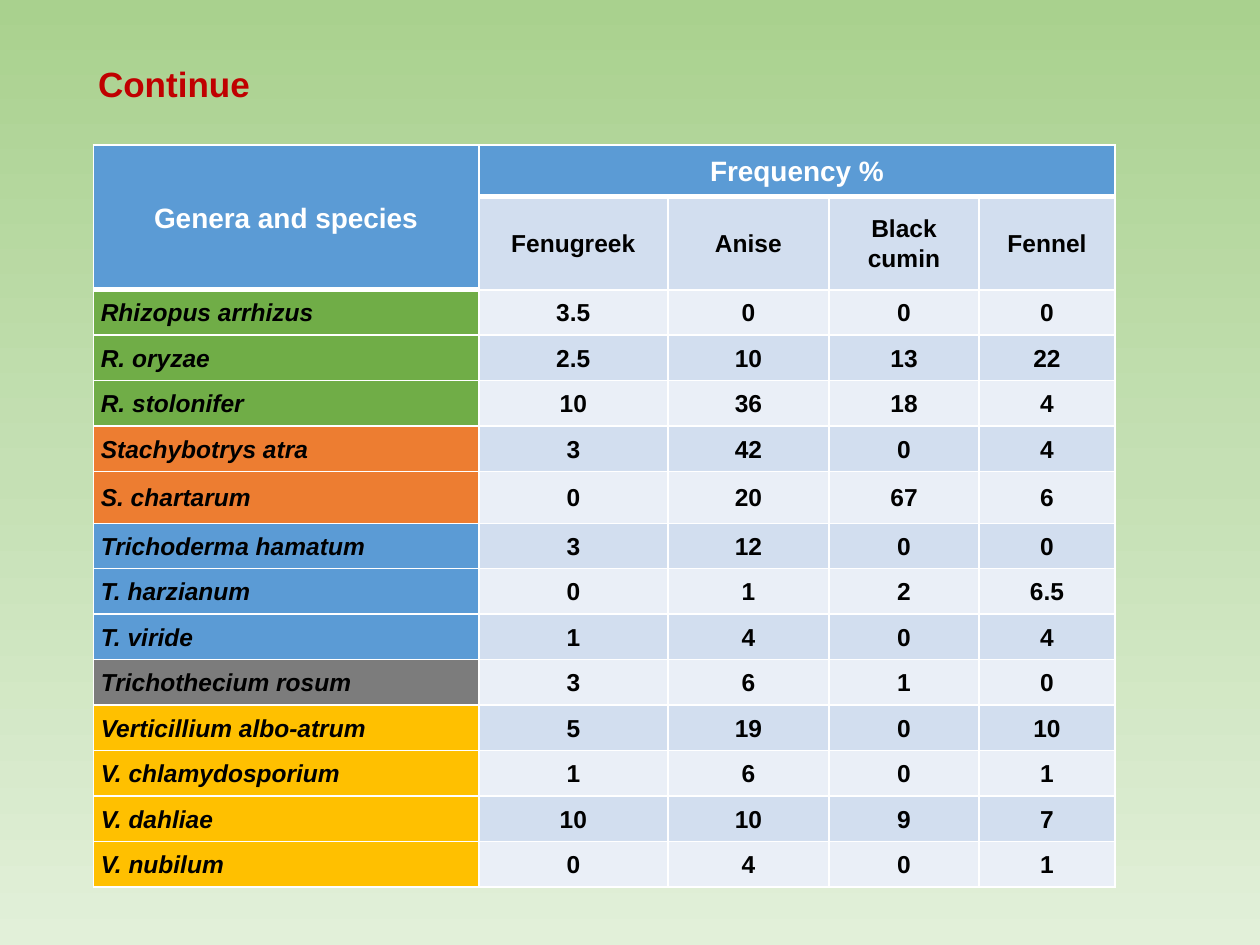
import copy

import pptx
import pptx.dml.color
import pptx.enum.text
import pptx.oxml
import pptx.oxml.ns
import pptx.util

WIDE, HIGH = pptx.util.Inches(10), pptx.util.Inches(7.5)
ALIGN = pptx.enum.text.PP_ALIGN
MIDDLE = pptx.enum.text.MSO_ANCHOR.MIDDLE

HUES = {
    "top": "A9D18E", "mid": "C5E0B4", "low": "E2F0D9",
    "title": "C00000", "white": "FFFFFF", "black": "000000",
    "blue": "5B9BD5", "dark": "D2DEEF", "light": "EAEFF7",
    "green": "70AD47", "orange": "ED7D31", "grey": "7C7C7C", "gold": "FFC000",
}

# Shares of the slide's width and height, in percent
COLS = [30.6, 15, 12.8, 11.9, 10.8]
ROW, TALL, HEAD = 4.81, 5.47, 9.87

PLANTS = ["Fenugreek", "Anise", "Black cumin", "Fennel"]
FUNGI = [
    ("Rhizopus arrhizus", "green", "3.5 0 0 0"),
    ("R. oryzae", "green", "2.5 10 13 22"),
    ("R. stolonifer", "green", "10 36 18 4"),
    ("Stachybotrys atra", "orange", "3 42 0 4"),
    ("S. chartarum", "orange", "0 20 67 6"),
    ("Trichoderma hamatum", "blue", "3 12 0 0"),
    ("T. harzianum", "blue", "0 1 2 6.5"),
    ("T. viride", "blue", "1 4 0 4"),
    ("Trichothecium rosum", "grey", "3 6 1 0"),
    ("Verticillium albo-atrum", "gold", "5 19 0 10"),
    ("V. chlamydosporium", "gold", "1 6 0 1"),
    ("V. dahliae", "gold", "10 10 9 7"),
    ("V. nubilum", "gold", "0 4 0 1"),
]


def across(share):
    return round(WIDE * share / 100)


def down(share):
    return round(HIGH * share / 100)


def color(name):
    return pptx.dml.color.RGBColor.from_string(HUES[name])


def assign(item, form):
    for name, value in form.items():
        setattr(item, name, value)


def write(frame, text, size, hue, align=ALIGN.LEFT, space=1.07, italic=False):
    line = frame.paragraphs[0]
    assign(line, {"alignment": align, "line_spacing": space})
    run = line.add_run()
    run.text = text
    assign(run.font, {"name": "Arial", "size": pptx.util.Pt(size),
                      "bold": True, "italic": italic})
    run.font.color.rgb = color(hue)


def shade(slide):
    """Fill the background with three colours from top to bottom."""
    fill = slide.background.fill
    fill.gradient()
    fill.gradient_angle = 270
    stops = slide.element.xpath(".//a:gsLst")[0]
    stops.insert(1, copy.deepcopy(stops[0]))
    for stop, name, place in zip(fill.gradient_stops,
                                 ("top", "mid", "low"), (0, 0.5, 1)):
        stop.color.rgb = color(name)
        stop.position = place


def title(slide, text):
    box = slide.shapes.add_textbox(across(6.8), down(3.73),
                                   across(49.7), down(10.8))
    assign(box.text_frame, {"word_wrap": True, "vertical_anchor": MIDDLE})
    write(box.text_frame, text, 20, "title", space=0.9)


def border(cell, top, low):
    """Draw white edges; top and low are widths in points."""
    props = cell._tc.get_or_add_tcPr()
    for spot, (side, width) in enumerate(
            {"L": 1, "R": 1, "T": top, "B": low}.items()):
        props.insert(spot, pptx.oxml.parse_xml(
            f'<a:ln{side} {pptx.oxml.ns.nsdecls("a")} w="{pptx.util.Pt(width)}">'
            f'<a:solidFill><a:srgbClr val="{HUES["white"]}"/></a:solidFill>'
            f'</a:ln{side}>'))


def paint(cell, fill, top=1, low=1):
    pad = pptx.util.Inches(0.06)
    assign(cell, {"margin_left": pad, "margin_right": pad, "margin_top": 0,
                  "margin_bottom": 0, "vertical_anchor": MIDDLE})
    cell.fill.solid()
    cell.fill.fore_color.rgb = color(fill)
    border(cell, top, low)


def header(table):
    for col in range(len(COLS)):
        paint(table.cell(0, col), "blue", low=3)
    paint(table.cell(1, 0), "blue", low=3)
    table.cell(0, 0).merge(table.cell(1, 0))
    table.cell(0, 1).merge(table.cell(0, len(PLANTS)))
    for col, text in enumerate(("Genera and species", "Frequency %")):
        write(table.cell(0, col).text_frame, text, 16, "white", ALIGN.CENTER)
    for col, plant in enumerate(PLANTS, 1):
        cell = table.cell(1, col)
        paint(cell, "dark", top=3)
        write(cell.text_frame, plant, 14, "black", ALIGN.CENTER)


def body(table):
    for row, (name, hue, rates) in enumerate(FUNGI, 2):
        cell = table.cell(row, 0)
        paint(cell, hue, top=3 if row == 2 else 1)
        write(cell.text_frame, name, 14, "black", italic=True)
        for col, rate in enumerate(rates.split(), 1):
            cell = table.cell(row, col)
            paint(cell, "dark" if row % 2 else "light")
            write(cell.text_frame, rate, 14, "black", ALIGN.CENTER)


def grid(slide):
    rows = [TALL, HEAD] + [TALL if name == "S. chartarum" else ROW
                           for name, _, _ in FUNGI]
    table = slide.shapes.add_table(
        len(rows), len(COLS), across(7.4), down(15.33),
        across(sum(COLS)), down(sum(rows))).table
    for col, share in zip(table.columns, COLS):
        col.width = across(share)
    for row, share in zip(table.rows, rows):
        row.height = down(share)
    header(table)
    body(table)


def main():
    deck = pptx.Presentation()
    assign(deck, {"slide_width": WIDE, "slide_height": HIGH})
    slide = deck.slides.add_slide(deck.slide_layouts[6])
    shade(slide)
    title(slide, "Continue")
    grid(slide)
    deck.save("out.pptx")


if __name__ == "__main__":
    main()
